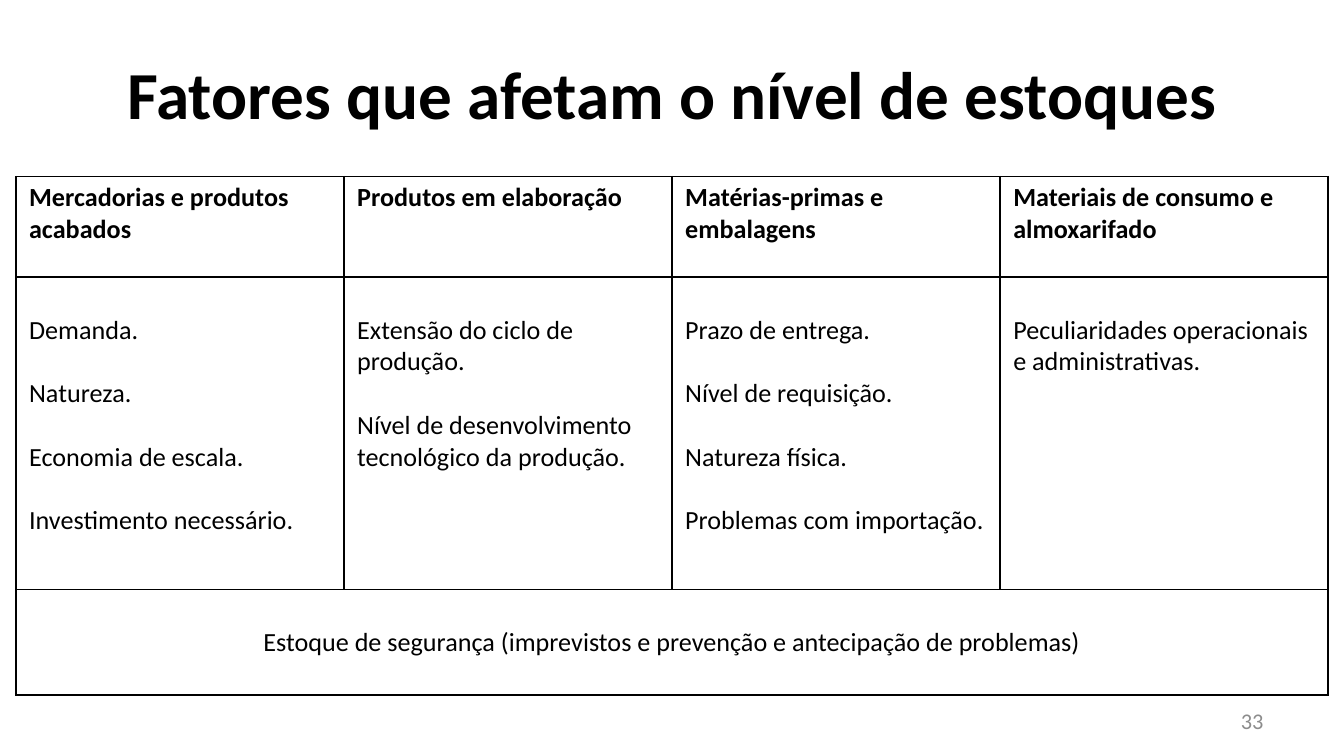
from lxml.etree import SubElement
from pptx import Presentation
from pptx.dml.color import RGBColor
from pptx.enum.text import MSO_ANCHOR as Anchor, PP_ALIGN as Align
from pptx.oxml import parse_xml
from pptx.oxml.ns import nsdecls, qn
from pptx.util import Cm, Pt

COLORS = {"ink": "000000", "paper": "FFFFFF", "number": "8C8C8C"}
FONT = "Calibri"
TITLE = "Fatores que afetam o nível de estoques"
FACTORS = {
    "Mercadorias e produtos acabados": [
        "Demanda.", "Natureza.", "Economia de escala.", "Investimento necessário."],
    "Produtos em elaboração": [
        "Extensão do ciclo de produção.",
        "Nível de desenvolvimento tecnológico da produção."],
    "Matérias-primas e embalagens": [
        "Prazo de entrega.", "Nível de requisição.", "Natureza física.",
        "Problemas com importação."],
    "Materiais de consumo e almoxarifado": [
        "Peculiaridades operacionais e administrativas."],
}
SAFETY = "Estoque de segurança (imprevistos e prevenção e antecipação de problemas)"
ROW_HEIGHTS = (1.9, 5.9, 2.0)
COLUMN_WIDTH = 6.2


def write(frame, lines, color="ink", align=Align.LEFT, gap=0, **font):
    """Write lines as paragraphs, with a gap in points between them."""
    frame.word_wrap = True
    for index, line in enumerate(lines):
        para = frame.add_paragraph() if index else frame.paragraphs[0]
        para.alignment = align
        para.space_before = Pt(gap if index else 0)
        span = para.add_run()
        span.text = line
        for name, value in {"name": FONT, "bold": False, **font}.items():
            setattr(span.font, name, value)
        span.font.color.rgb = RGBColor.from_string(COLORS[color])


def add_label(page, place, text, **style):
    """Add a vertically centred text box."""
    box = page.shapes.add_textbox(*map(Cm, place))
    box.text_frame.vertical_anchor = Anchor.MIDDLE
    write(box.text_frame, [text], **style)


def add_borders(cell):
    """Draw a thin line on each side of a cell."""
    properties = cell._tc.get_or_add_tcPr()
    for index, side in enumerate(("lnL", "lnR", "lnT", "lnB")):
        line = parse_xml(f'<a:{side} {nsdecls("a")} w="{Pt(1)}"/>')
        fill = SubElement(line, qn("a:solidFill"))
        SubElement(fill, qn("a:srgbClr"), val=COLORS["ink"])
        properties.insert(index, line)


def fill_cell(cell, lines, top=0.1, **style):
    """Write a cell's text below its top margin."""
    margins = {"margin_left": 0.25, "margin_right": 0.25,
               "margin_top": top, "margin_bottom": 0.1}
    for name, value in margins.items():
        setattr(cell, name, Cm(value))
    write(cell.text_frame, lines, size=Pt(14), **style)


def add_factor_table(page):
    """Add the table of factors by kind of stock."""
    count = len(FACTORS)
    table = page.shapes.add_table(
        len(ROW_HEIGHTS), count, Cm(0.3), Cm(3.34),
        Cm(COLUMN_WIDTH * count), Cm(sum(ROW_HEIGHTS))).table
    for name in ("first_row", "horz_banding"):
        setattr(table, name, False)
    for row, height in zip(table.rows, ROW_HEIGHTS):
        row.height = Cm(height)
    for cell in table.iter_cells():
        cell.fill.solid()
        cell.fill.fore_color.rgb = RGBColor.from_string(COLORS["paper"])
        add_borders(cell)
    for column, (heading, factors) in enumerate(FACTORS.items()):
        fill_cell(table.cell(0, column), [heading], bold=True)
        fill_cell(table.cell(1, column), factors, top=0.7, gap=17)
    safety = table.cell(2, 0)
    safety.merge(table.cell(2, count - 1))
    fill_cell(safety, [SAFETY], top=0.7, align=Align.CENTER)


def main():
    """Build and save the slide."""
    deck = Presentation()
    deck.slide_width, deck.slide_height = Cm(25.4), Cm(14.29)
    page = deck.slides.add_slide(deck.slide_layouts[6])
    add_label(page, (1.27, 0.57, 22.86, 2.38), TITLE,
              size=Pt(36), bold=True, align=Align.CENTER)
    add_factor_table(page)
    add_label(page, (18.2, 13.24, 5.93, 0.76), "33",
              size=Pt(12), color="number", align=Align.RIGHT)
    deck.save("out.pptx")


if __name__ == "__main__":
    main()
